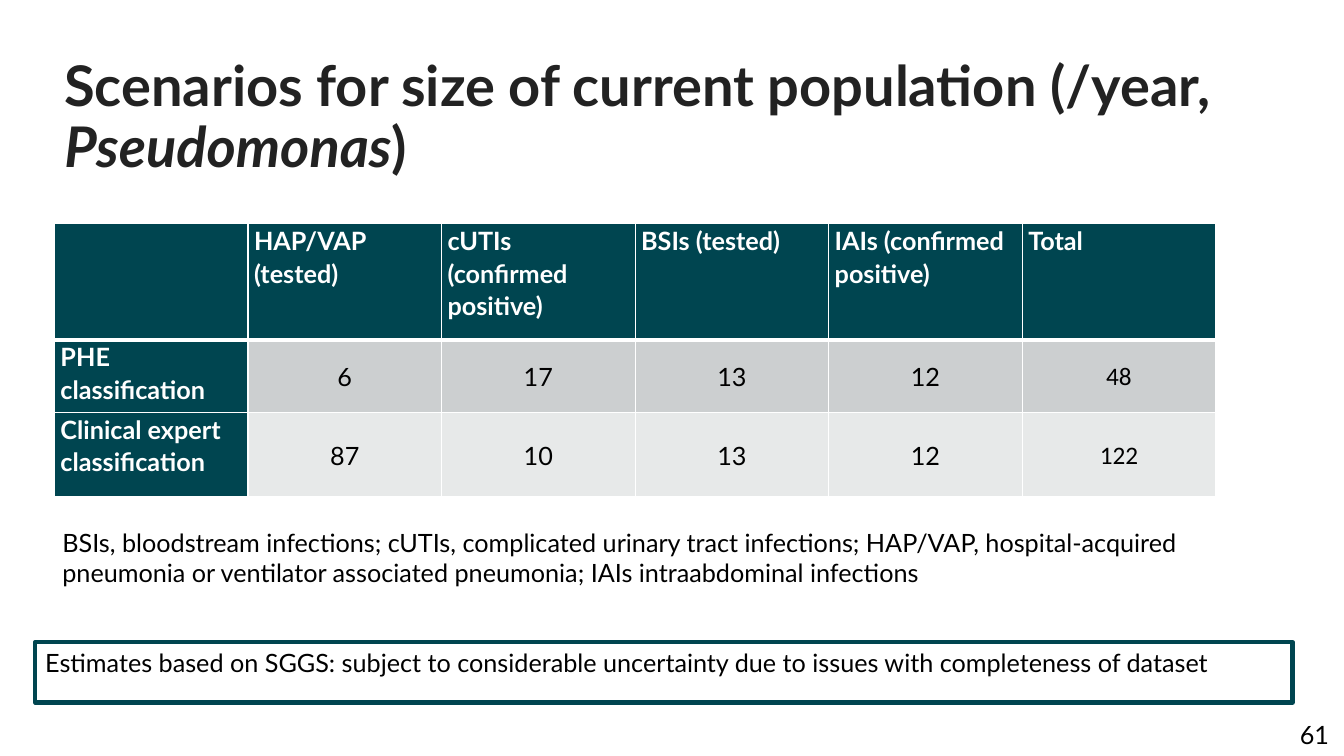
from lxml.etree import SubElement
from pptx import Presentation
from pptx.dml.color import RGBColor
from pptx.enum.shapes import MSO_SHAPE as Shape
from pptx.enum.text import MSO_ANCHOR as Anchor, PP_ALIGN as Align
from pptx.oxml.ns import qn
from pptx.util import Inches, Pt

TEAL = RGBColor(0x00, 0x45, 0x50)
WHITE = RGBColor(0xFF, 0xFF, 0xFF)
BLACK = RGBColor(0x00, 0x00, 0x00)
TITLE_GREY = RGBColor(0x22, 0x22, 0x22)
ROW_FILLS = [RGBColor(0xCC, 0xCF, 0xD0), RGBColor(0xE7, 0xE9, 0xE9)]

COLUMN_WIDTH = 1.92
ROW_HEIGHTS = [1.15, 0.72, 0.84]
SCENARIOS = [
    ["", "HAP/VAP (tested)", "cUTIs (confirmed positive)", "BSIs (tested)",
     "IAIs (confirmed positive)", "Total"],
    ["PHE classification", "6", "17", "13", "12", "48"],
    ["Clinical expert classification", "87", "10", "13", "12", "122"],
]


def style_font(font, color=BLACK, size=18, bold=False, name="Lato"):
    font.name = name
    font.size = Pt(size)
    font.bold = bold
    font.color.rgb = color


def add_text(slide, left, top, width, height, text, align=Align.LEFT):
    box = slide.shapes.add_textbox(
        Inches(left), Inches(top), Inches(width), Inches(height))
    frame = box.text_frame
    frame.word_wrap = True
    para = frame.paragraphs[0]
    para.text = text
    para.alignment = align
    style_font(para.runs[0].font)


def add_title(slide):
    box = slide.shapes.add_textbox(
        Inches(0.54), Inches(0.53), Inches(12.12), Inches(1.4))
    box.text_frame.word_wrap = True
    para = box.text_frame.paragraphs[0]
    para.line_spacing = 0.9
    for text, italic in [
        ("Scenarios for size of current population (/year, ", False),
        ("Pseudomonas", True),
        (")", False),
    ]:
        span = para.add_run()
        span.text = text
        style_font(span.font, TITLE_GREY, 40, bold=True)
        span.font.italic = italic


def add_borders(cell, bottom_width):
    """Draw white cell edges; only the bottom edge varies in width."""
    properties = cell._tc.get_or_add_tcPr()
    for side in ("L", "R", "T", "B"):
        width = bottom_width if side == "B" else 1
        line = SubElement(properties, qn(f"a:ln{side}"), w=str(Pt(width)))
        fill = SubElement(line, qn("a:solidFill"))
        SubElement(fill, qn("a:srgbClr"), val=str(WHITE))


def fill_cell(cell, text, row, column):
    is_label = row == 0 or column == 0
    add_borders(cell, 3 if row == 0 else 1)
    cell.fill.solid()
    cell.fill.fore_color.rgb = TEAL if is_label else ROW_FILLS[row - 1]
    cell.margin_left = cell.margin_right = Inches(0.06)
    cell.margin_top = cell.margin_bottom = 0
    cell.vertical_anchor = Anchor.TOP if is_label else Anchor.MIDDLE
    para = cell.text_frame.paragraphs[0]
    para.text = text
    para.alignment = Align.LEFT if is_label else Align.CENTER
    para.line_spacing = 1.07
    para.space_after = Pt(8)
    is_total = not is_label and column == len(SCENARIOS[0]) - 1
    for span in para.runs:
        style_font(span.font, WHITE if is_label else BLACK, bold=is_label,
                   name="Calibri" if is_total else "Lato")


def add_scenario_table(slide):
    column_count = len(SCENARIOS[0])
    table = slide.shapes.add_table(
        len(SCENARIOS), column_count, Inches(0.54), Inches(2.22),
        Inches(COLUMN_WIDTH * column_count), Inches(sum(ROW_HEIGHTS))).table
    for column in table.columns:
        column.width = Inches(COLUMN_WIDTH)
    for row, height in enumerate(ROW_HEIGHTS):
        table.rows[row].height = Inches(height)
        for column, text in enumerate(SCENARIOS[row]):
            fill_cell(table.cell(row, column), text, row, column)


def add_caveat(slide):
    box = slide.shapes.add_shape(
        Shape.RECTANGLE, Inches(0.35), Inches(6.37), Inches(12.47), Inches(0.6))
    box.shadow.inherit = False
    box.fill.background()
    box.line.color.rgb = TEAL
    box.line.width = Pt(3)
    frame = box.text_frame
    frame.word_wrap = True
    frame.vertical_anchor = Anchor.TOP
    para = frame.paragraphs[0]
    para.text = ("Estimates based on SGGS: subject to considerable uncertainty "
                 "due to issues with completeness of dataset")
    para.alignment = Align.LEFT
    style_font(para.runs[0].font)


def main():
    deck = Presentation()
    deck.slide_width = Inches(13.33)
    deck.slide_height = Inches(7.5)
    slide = deck.slides.add_slide(deck.slide_layouts[6])
    add_text(slide, 11.44, 7.09, 1.84, 0.4, "61", Align.RIGHT)
    add_title(slide)
    add_scenario_table(slide)
    add_text(slide, 0.52, 5.18, 12.12, 0.71,
             "BSIs, bloodstream infections; cUTIs, complicated urinary tract "
             "infections; HAP/VAP, hospital-acquired pneumonia or ventilator "
             "associated pneumonia; IAIs intraabdominal infections")
    add_caveat(slide)
    deck.save("out.pptx")


if __name__ == "__main__":
    main()
